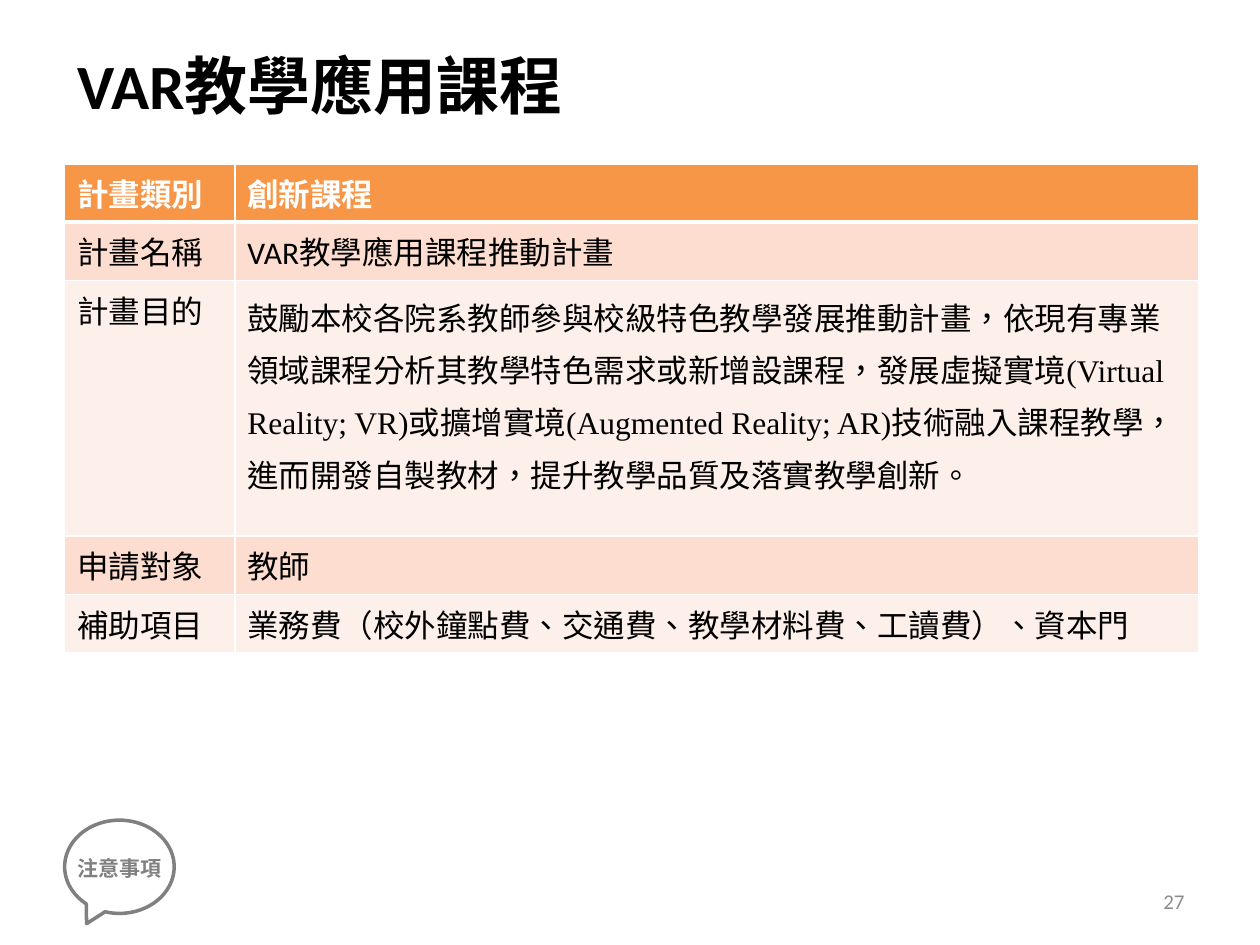
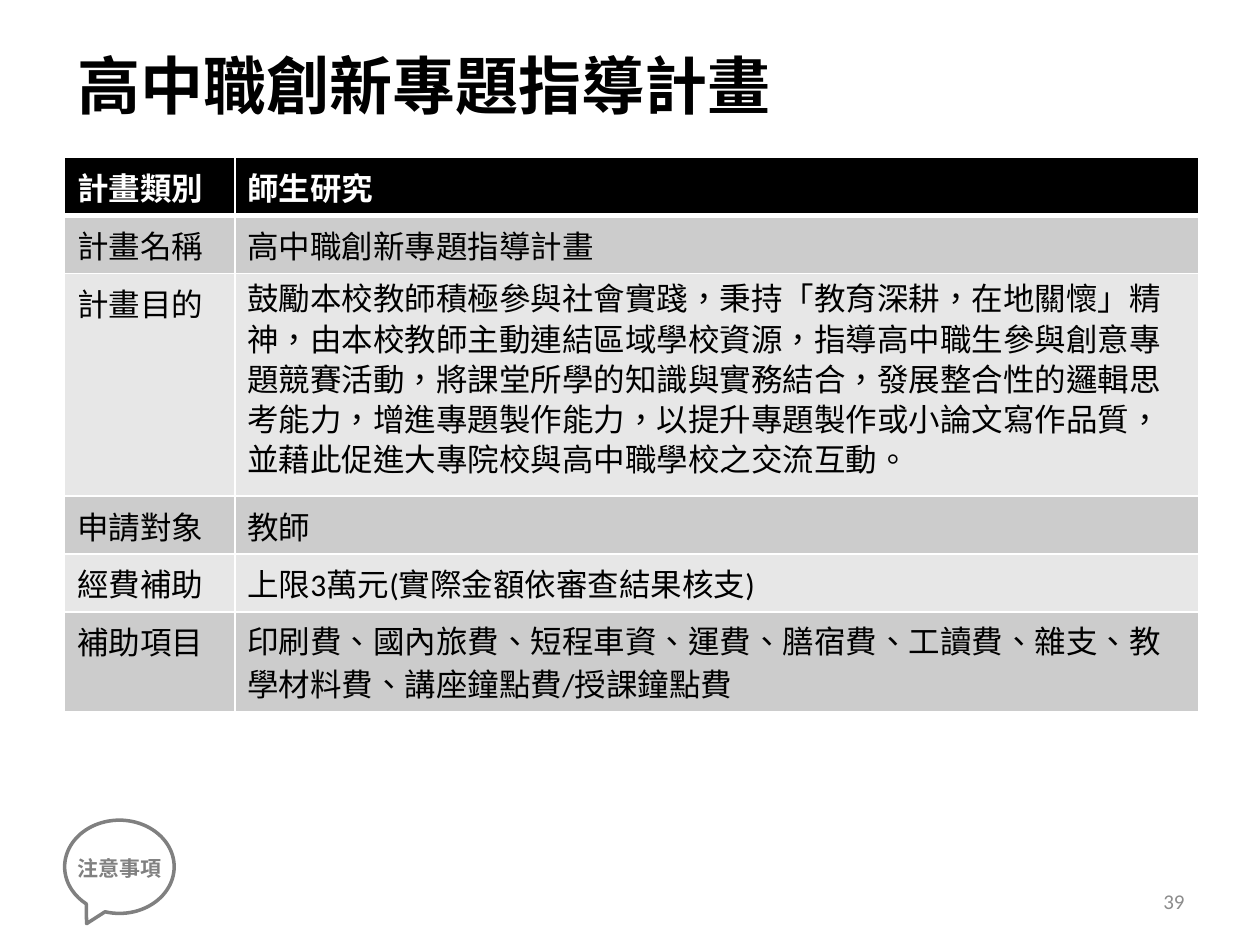
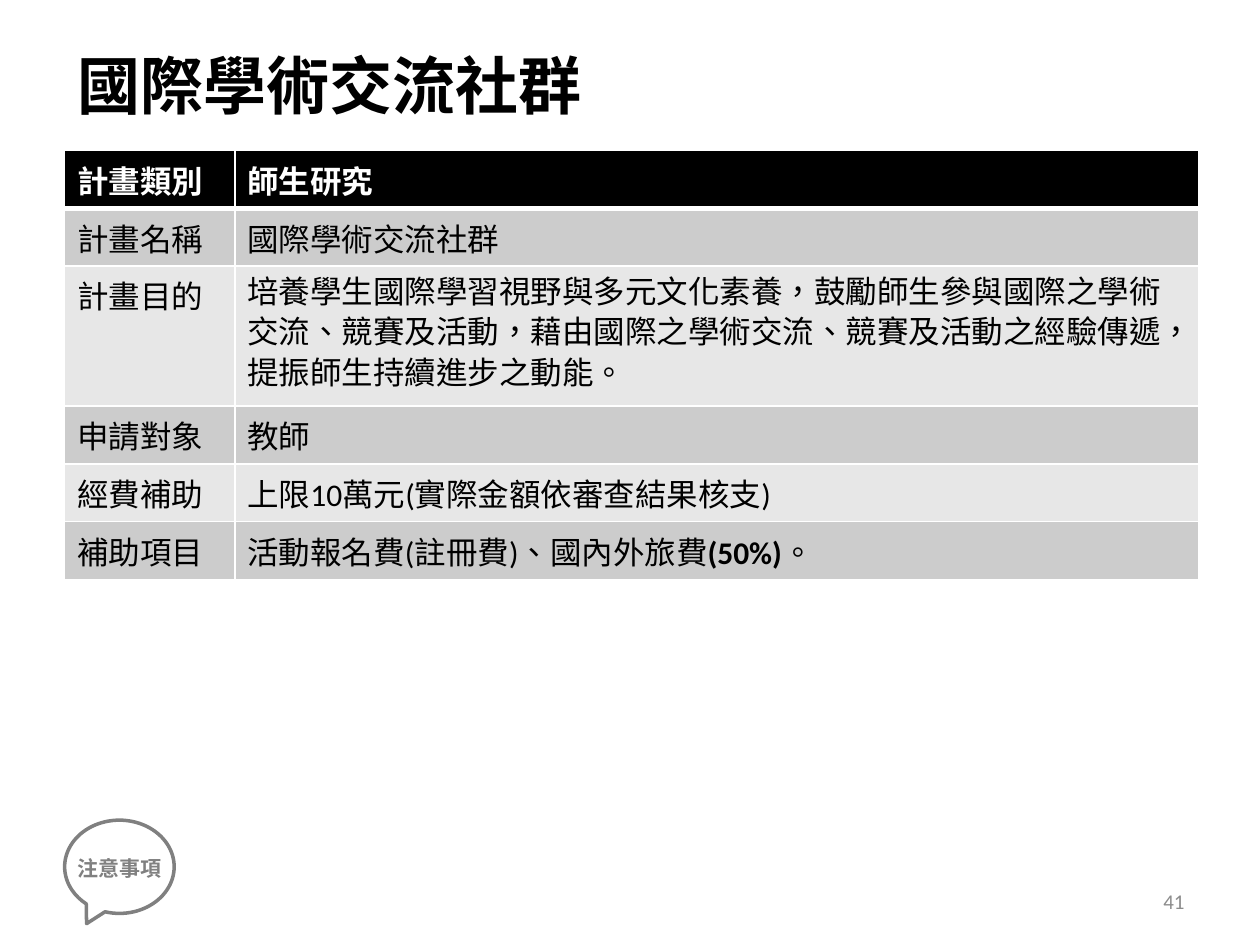
from lxml.etree import SubElement
from pptx import Presentation
from pptx.dml.color import RGBColor
from pptx.enum.shapes import MSO_SHAPE
from pptx.enum.text import MSO_ANCHOR, PP_ALIGN
from pptx.oxml.ns import qn
from pptx.util import Pt

# Shared style
LATIN, CJK, LANGUAGE = "Calibri", "Noto Sans CJK SC", "zh-TW"
BLACK, WHITE, GRAY, NUMBER_GRAY = "000000", "FFFFFF", "808080", "8C8C8C"
ORANGE_BANDS = {"header": "F79646", "dark": "FCDDCF", "light": "FDEFE9"}
BLACK_BANDS = {"header": BLACK, "dark": "CCCCCC", "light": "E7E7E7"}
LEFT = 37
COLUMN_WIDTHS = (97.2, 550.8)
ROW = 33.1

# Content: each row is (label, text or runs, height, format)
SLIDES = [
    {
        "title": "VAR教學應用課程", "number": "27", "top": 93.6, "bands": ORANGE_BANDS,
        "rows": [
            ("計畫類別", "創新課程", ROW, {}),
            ("計畫名稱", "VAR教學應用課程推動計畫", ROW, {}),
            ("計畫目的",
             "鼓勵本校各院系教師參與校級特色教學發展推動計畫，依現有專業領域課程分析其教學特色需求或新增設課程，"
             "發展虛擬實境(Virtual Reality; VR)或擴增實境(Augmented Reality; AR)技術融入課程教學，"
             "進而開發自製教材，提升教學品質及落實教學創新。",
             146.2, {"line_spacing": 30, "font": "Times New Roman"}),
            ("申請對象", "教師", ROW, {}),
            ("補助項目", "業務費（校外鐘點費、交通費、教學材料費、工讀費）、資本門", ROW, {}),
        ],
    },
    {
        "title": "高中職創新專題指導計畫", "number": "39", "top": 90, "bands": BLACK_BANDS,
        "rows": [
            ("計畫類別", "師生研究", ROW, {}),
            ("計畫名稱", "高中職創新專題指導計畫", ROW, {}),
            ("計畫目的",
             "鼓勵本校教師積極參與社會實踐，秉持「教育深耕，在地關懷」精神，由本校教師主動連結區域學校資源，"
             "指導高中職生參與創意專題競賽活動，將課堂所學的知識與實務結合，發展整合性的邏輯思考能力，"
             "增進專題製作能力，以提升專題製作或小論文寫作品質，並藉此促進大專院校與高中職學校之交流互動。",
             127.4, {"line_spacing": 23}),
            ("申請對象", "教師", ROW, {}),
            ("經費補助", "上限3萬元(實際金額依審查結果核支)", ROW, {}),
            ("補助項目",
             "印刷費、國內旅費、短程車資、運費、膳宿費、工讀費、雜支、教學材料費、講座鐘點費/授課鐘點費",
             56.9, {"line_spacing": 25}),
        ],
    },
    {
        "title": "國際學術交流社群", "number": "41", "top": 85.9, "bands": BLACK_BANDS,
        "rows": [
            ("計畫類別", "師生研究", ROW, {}),
            ("計畫名稱", "國際學術交流社群", ROW, {}),
            ("計畫目的",
             "培養學生國際學習視野與多元文化素養，鼓勵師生參與國際之學術交流、競賽及活動，"
             "藉由國際之學術交流、競賽及活動之經驗傳遞，提振師生持續進步之動能。",
             79.9, {"line_spacing": 23}),
            ("申請對象", "教師", ROW, {}),
            ("經費補助", "上限10萬元(實際金額依審查結果核支)", ROW, {}),
            ("補助項目",
             [("活動報名費(註冊費)、國內外旅費", False), ("(50%)", True), ("。", False)],
             ROW, {}),
        ],
    },
]


def rgb(color):
    return RGBColor.from_string(color)


def write(frame, text, size=18, color=BLACK, bold=False, font=LATIN,
          align=PP_ALIGN.LEFT, line_spacing=None):
    """Fill a text frame with a string or a list of (text, bold) runs."""
    paragraph = frame.paragraphs[0]
    paragraph.alignment = align
    if line_spacing:
        paragraph.line_spacing = Pt(line_spacing)
    for part, part_bold in [(text, bold)] if isinstance(text, str) else text:
        run = paragraph.add_run()
        run.text = part
        run.font.size = Pt(size)
        run.font.bold = part_bold
        run.font.name = font
        run.font.color.rgb = rgb(color)
        properties = run.font._element
        properties.set("lang", LANGUAGE)
        SubElement(properties, qn("a:ea"), typeface=CJK)


def add_text(shapes, text, left, top, width, height, anchor=MSO_ANCHOR.MIDDLE, **style):
    box = shapes.add_textbox(Pt(left), Pt(top), Pt(width), Pt(height))
    box.text_frame.word_wrap = True
    box.text_frame.vertical_anchor = anchor
    write(box.text_frame, text, **style)


def add_borders(cell, top, bottom):
    properties = cell._tc.get_or_add_tcPr()
    for side, width in (("L", 1), ("R", 1), ("T", top), ("B", bottom)):
        line = SubElement(properties, qn(f"a:ln{side}"), w=str(Pt(width)))
        fill = SubElement(line, qn("a:solidFill"))
        SubElement(fill, qn("a:srgbClr"), val=WHITE)


def add_plan_table(slide, rows, top, bands):
    height = sum(row[2] for row in rows)
    table = slide.shapes.add_table(len(rows), 2, Pt(LEFT), Pt(top),
                                   Pt(sum(COLUMN_WIDTHS)), Pt(height)).table
    for column, width in zip(table.columns, COLUMN_WIDTHS):
        column.width = Pt(width)
    for index, (label, text, row_height, style) in enumerate(rows):
        table.rows[index].height = Pt(row_height)
        header = index == 0
        band = "header" if header else "dark" if index % 2 else "light"
        for column, (content, extra) in enumerate(((label, {}), (text, style))):
            cell = table.cell(index, column)
            # The rule below the header is heavier
            add_borders(cell, top=3 if index == 1 else 1, bottom=3 if header else 1)
            cell.fill.solid()
            cell.fill.fore_color.rgb = rgb(bands[band])
            write(cell.text_frame, content, color=WHITE if header else BLACK,
                  bold=header, **extra)


def add_notice(slide):
    group = slide.shapes.add_group_shape()
    add_text(group.shapes, "注意事項", LEFT, 485.3, 63.4, 21.6, anchor=MSO_ANCHOR.TOP,
             size=12, color=GRAY, bold=True, font=CJK)
    callout = group.shapes.add_shape(MSO_SHAPE.OVAL_CALLOUT, Pt(LEFT), Pt(468.7),
                                     Pt(62.6), Pt(53.3))
    callout.adjustments[0], callout.adjustments[1] = -0.3, 0.61
    callout.shadow.inherit = False
    callout.fill.background()
    callout.line.color.rgb = rgb(GRAY)
    callout.line.width = Pt(2)


def main():
    presentation = Presentation()
    presentation.slide_width, presentation.slide_height = Pt(720), Pt(540)
    for content in SLIDES:
        slide = presentation.slides.add_slide(presentation.slide_layouts[6])
        add_plan_table(slide, content["rows"], content["top"], content["bands"])
        add_text(slide.shapes, content["title"], LEFT, 20.6, 454.3, 55.4, size=36, bold=True)
        add_text(slide.shapes, content["number"], 516.2, 500.4, 167.8, 28.8,
                 size=12, color=NUMBER_GRAY, align=PP_ALIGN.RIGHT)
        add_notice(slide)
    presentation.save("out.pptx")


if __name__ == "__main__":
    main()
